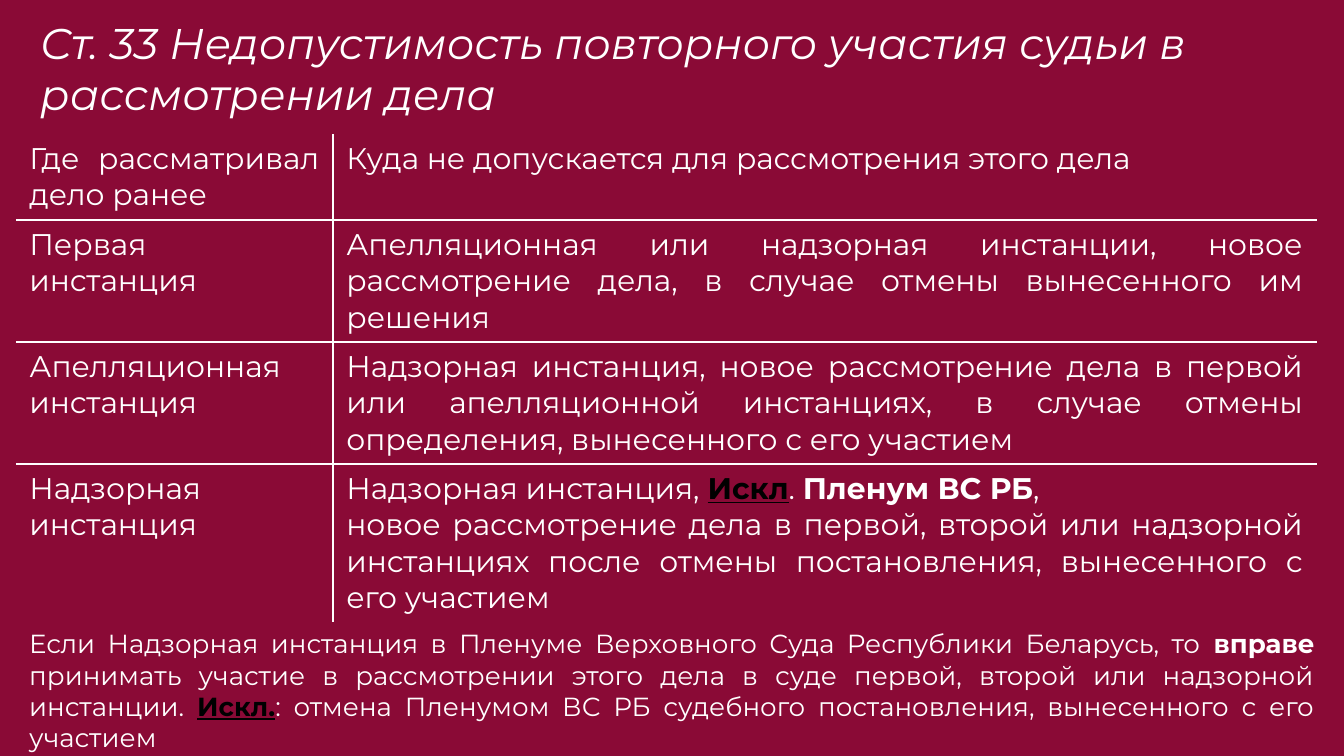
from dataclasses import dataclass

from lxml.etree import SubElement
from pptx import Presentation
from pptx.dml.color import RGBColor as Rgb
from pptx.enum.text import MSO_ANCHOR as Anchor
from pptx.enum.text import MSO_AUTO_SIZE as AutoSize
from pptx.enum.text import PP_ALIGN as Align
from pptx.oxml.ns import qn
from pptx.util import Emu, Pt

EMU_PER_PX = 914400 / 134.4
FONT = "Montserrat"
COLORS = {"wine": "8A0A36", "white": "FFFFFF", "black": "000000"}


@dataclass(frozen=True)
class Span:
    text: str
    bold: bool = False
    underline: bool = False
    color: str = "white"


@dataclass(frozen=True)
class Row:
    height: int
    earlier: str
    barred: list[list[Span]]


def px(value: int) -> Emu:
    return Emu(round(value * EMU_PER_PX))


def color(name: str) -> Rgb:
    return Rgb.from_string(COLORS[name])


def write(frame, paras: list[list[Span]], *, size: int, italic=False, align=Align.LEFT) -> None:
    frame.word_wrap = True
    for index, spans in enumerate(paras):
        para = frame.add_paragraph() if index else frame.paragraphs[0]
        para.alignment = align
        for span in spans:
            run = para.add_run()
            run.text = span.text
            font = run.font
            font.name, font.size = FONT, Pt(size)
            font.bold, font.italic, font.underline = span.bold, italic, span.underline
            font.color.rgb = color(span.color)


def add_border(cell, side: str, visible: bool) -> None:
    line = SubElement(cell._tc.get_or_add_tcPr(), qn(f"a:ln{side}"), w=str(Pt(1)))
    if visible:
        fill = SubElement(line, qn("a:solidFill"))
        SubElement(fill, qn("a:srgbClr"), val=COLORS["white"])
    else:
        SubElement(line, qn("a:noFill"))


def add_instance_table(page, rows: list[Row], widths: list[int], left: int, top: int) -> None:
    height = sum(row.height for row in rows)
    table = page.shapes.add_table(
        len(rows), len(widths), px(left), px(top), px(sum(widths)), px(height)
    ).table
    table.first_row = table.horz_banding = False
    for column, width in zip(table.columns, widths):
        column.width = px(width)
    for r, row in enumerate(rows):
        table.rows[r].height = px(row.height)
        for c, paras in enumerate([[[Span(row.earlier)]], row.barred]):
            cell = table.cell(r, c)
            write(cell.text_frame, paras, size=16, align=Align.JUSTIFY)
            inner = {"L": c > 0, "R": c < len(widths) - 1, "T": r > 0, "B": r < len(rows) - 1}
            for side, visible in inner.items():
                add_border(cell, side, visible)
            cell.fill.background()


ROWS = [
    Row(86, "Где рассматривал дело ранее",
        [[Span("Куда не допускается для рассмотрения этого дела")]]),
    Row(122, "Первая инстанция ",
        [[Span("Апелляционная или надзорная инстанции, новое рассмотрение дела, "
               "в случае отмены вынесенного им решения")]]),
    Row(122, "Апелляционная инстанция",
        [[Span("Надзорная инстанция, новое рассмотрение дела в первой или апелляционной "
               "инстанциях, в случае отмены определения, вынесенного с его участием")]]),
    Row(158, "Надзорная инстанция",
        [[Span("Надзорная инстанция, "),
          Span("Искл", bold=True, underline=True, color="black"),
          Span(". "),
          Span("Пленум ВС РБ", bold=True),
          Span(", ")],
         [Span("новое рассмотрение дела в первой, второй или надзорной инстанциях "
               "после отмены постановления, вынесенного с его участием")]]),
]
TITLE = [[Span("Ст. 33 Недопустимость повторного участия судьи в рассмотрении дела")]]
FOOTNOTE = [[
    Span("Если Надзорная инстанция в Пленуме Верховного Суда Республики Беларусь, то "),
    Span("вправе", bold=True),
    Span(" принимать участие в рассмотрении этого дела в суде первой, второй "
         "или надзорной инстанции. "),
    Span("Искл.", bold=True, underline=True, color="black"),
    Span(": отмена Пленумом ВС РБ судебного постановления, вынесенного с его участием"),
]]


def main() -> None:
    deck = Presentation()
    deck.slide_width, deck.slide_height = px(1344), px(756)
    page = deck.slides.add_slide(deck.slide_layouts[6])
    page.background.fill.solid()
    page.background.fill.fore_color.rgb = color("wine")

    title = page.shapes.add_textbox(px(27), px(39), px(1317), px(58)).text_frame
    title.vertical_anchor = Anchor.MIDDLE
    title.margin_top = title.margin_bottom = px(13)
    write(title, TITLE, size=23, italic=True)

    add_instance_table(page, ROWS, [317, 984], 16, 134)

    footnote = page.shapes.add_textbox(px(16), px(621), px(1312), px(140)).text_frame
    footnote.auto_size = AutoSize.SHAPE_TO_FIT_TEXT
    write(footnote, FOOTNOTE, size=14, align=Align.JUSTIFY)

    deck.save("out.pptx")


if __name__ == "__main__":
    main()
